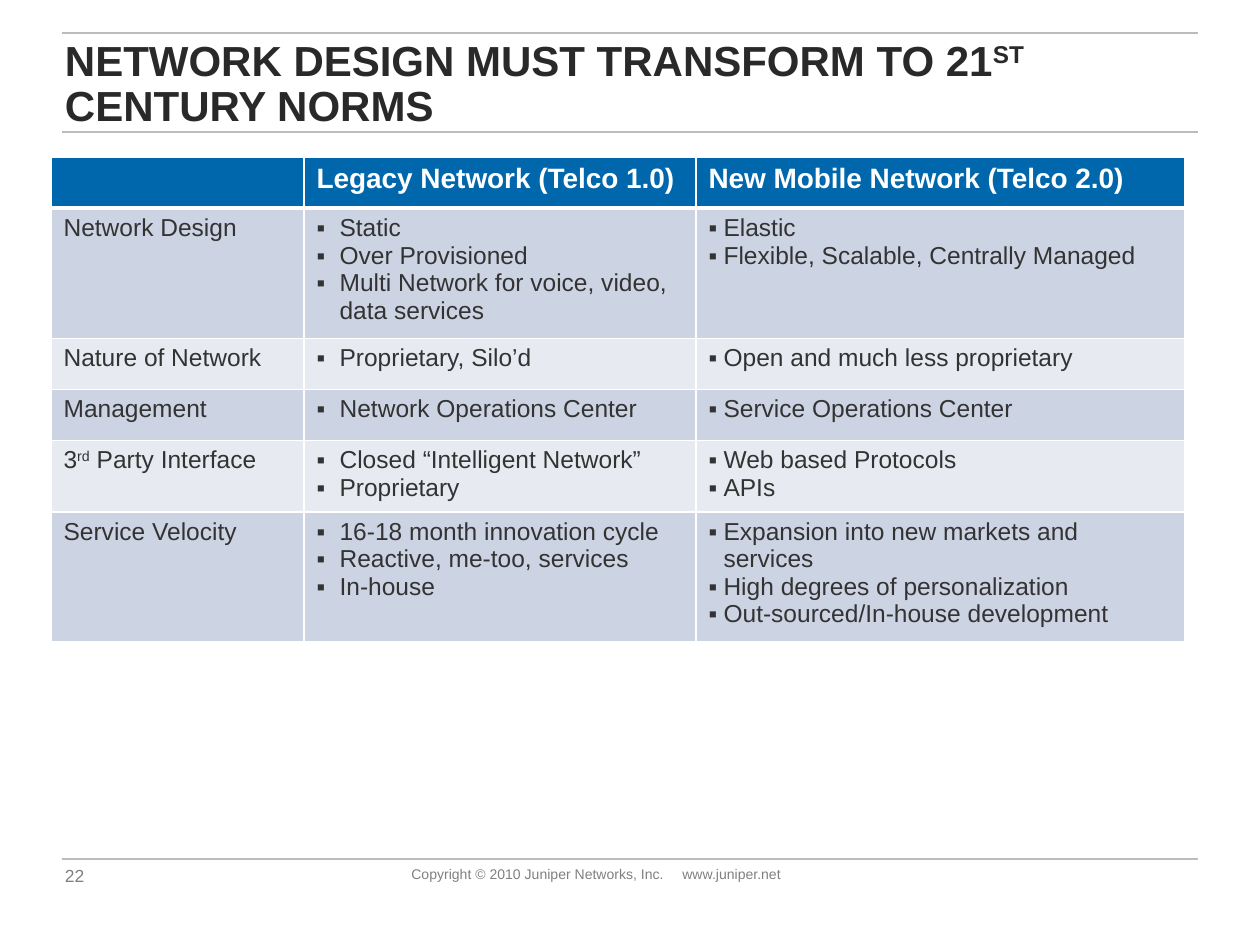
import pptx
import pptx.dml.color
import pptx.enum.shapes
import pptx.enum.text
import pptx.oxml
import pptx.oxml.ns
import pptx.util
from lxml import etree

RGB = pptx.dml.color.RGBColor
BLUE = RGB(0x00, 0x67, 0xAC)
DARK = RGB(0xCC, 0xD3, 0xE3)
PALE = RGB(0xE7, 0xEB, 0xF1)
WHITE = RGB(0xFF, 0xFF, 0xFF)
INK = RGB(0x33, 0x33, 0x33)
BLACK = RGB(0x29, 0x29, 0x29)
GREY = RGB(0x80, 0x7F, 0x83)
RULE = RGB(0xBA, 0xBC, 0xBE)
qn = pptx.oxml.ns.qn
ANCHOR = pptx.enum.text.MSO_ANCHOR


def px(n):
    return pptx.util.Emu(round(n * 914400 / 126))


def write(para, text, size, color, bold=False):
    """Fill a paragraph; text between carets is superscript."""
    for i, part in enumerate(text.split("^")):
        run = para.add_run()
        run.text = part
        run.font.name = "Arial"
        run.font.size = pptx.util.Pt(size)
        run.font.bold = bold
        run.font.color.rgb = color
        if i % 2:
            run.font._element.set("baseline", "30000")


prs = pptx.Presentation()
prs.slide_width, prs.slide_height = px(1260), px(945)
slide = prs.slides.add_slide(prs.slide_layouts[5])
shapes = slide.shapes

# Rules above and below the title and above the footer
for y in (33, 132, 859):
    line = shapes.add_connector(
        pptx.enum.shapes.MSO_CONNECTOR.STRAIGHT, px(62), px(y), px(1198), px(y))
    line.line.color.rgb = RULE
    line.line.width = pptx.util.Pt(1)
    etree.SubElement(line._element.spPr, qn("a:effectLst"))

# Title
title = shapes.title
title.left, title.top, title.width, title.height = px(65), px(35), px(1133), px(102)
frame = title.text_frame
frame.auto_size = pptx.enum.text.MSO_AUTO_SIZE.NONE
frame.vertical_anchor = ANCHOR.BOTTOM
frame.margin_left = 0
para = frame.paragraphs[0]
para.alignment = pptx.enum.text.PP_ALIGN.LEFT
para.line_spacing = 0.9
para.space_after = pptx.util.Pt(5.3)
write(para, "NETWORK DESIGN MUST TRANSFORM TO 21^ST^ CENTURY NORMS", 24, BLACK, True)

# Page number
frame = shapes.add_textbox(px(65), px(858), px(73), px(28)).text_frame
frame.margin_left = frame.margin_right = frame.margin_top = frame.margin_bottom = 0
frame.vertical_anchor = ANCHOR.BOTTOM
write(frame.paragraphs[0], "22", 10, GREY)

# Copyright line, with a tab before the web address
frame = shapes.add_textbox(px(399), px(859), px(398), px(30)).text_frame
para = frame.paragraphs[0]
tabs = etree.SubElement(para._p.get_or_add_pPr(), qn("a:tabLst"))
etree.SubElement(tabs, qn("a:tab"), pos=str(px(271)), algn="l")
write(para, "Copyright © 2010 Juniper Networks, Inc.\twww.juniper.net", 8, GREY)

# Comparison table: each cell is a list of paragraphs
rows = [
    ([], ["Legacy Network (Telco 1.0)"], ["New Mobile Network (Telco 2.0)"]),
    (["Network Design"],
     ["Static", "Over Provisioned", "Multi Network for voice, video, data services"],
     ["Elastic", "Flexible, Scalable, Centrally Managed"]),
    (["Nature of Network"], ["Proprietary, Silo’d"],
     ["Open and much less proprietary"]),
    (["Management"], ["Network Operations Center"], ["Service Operations Center"]),
    (["3^rd^ Party Interface"], ["Closed “Intelligent Network”", "Proprietary"],
     ["Web based Protocols", "APIs"]),
    (["Service Velocity"],
     ["16-18 month innovation cycle", "Reactive, me-too, services", "In-house"],
     ["Expansion into new markets and services", "High degrees of personalization",
      "Out-sourced/In-house development"]),
]
widths = (253, 392, 489)
hangs = (0, 23, 15)
table = shapes.add_table(len(rows), 3, px(51), px(157), px(sum(widths)),
                         px(51 * len(rows))).table
for col, width in zip(table.columns, widths):
    col.width = px(width)

for r, row in enumerate(rows):
    for c, items in enumerate(row):
        cell = table.cell(r, c)

        # White borders, thicker under the header
        props = cell._tc.get_or_add_tcPr()
        for side in "LRTB":
            thick = (r, side) in ((0, "B"), (1, "T"))
            edge = etree.SubElement(props, qn("a:ln" + side),
                                    w=str(pptx.util.Pt(3 if thick else 1)))
            fill = etree.SubElement(edge, qn("a:solidFill"))
            etree.SubElement(fill, qn("a:srgbClr"), val=str(WHITE))
        cell.fill.solid()
        cell.fill.fore_color.rgb = BLUE if r == 0 else DARK if r % 2 else PALE

        # Text, bulleted in the body columns
        frame = cell.text_frame
        for i, item in enumerate(items):
            para = frame.add_paragraph() if i else frame.paragraphs[0]
            if r and c:
                ppr = para._p.get_or_add_pPr()
                ppr.set("marL", str(px(hangs[c])))
                ppr.set("indent", str(-px(hangs[c])))
                etree.SubElement(ppr, qn("a:buFont"), typeface="Arial")
                etree.SubElement(ppr, qn("a:buChar"), char="▪")
            if r:
                write(para, item, 14, INK)
            else:
                write(para, item, 16, WHITE, True)

prs.save("out.pptx")
